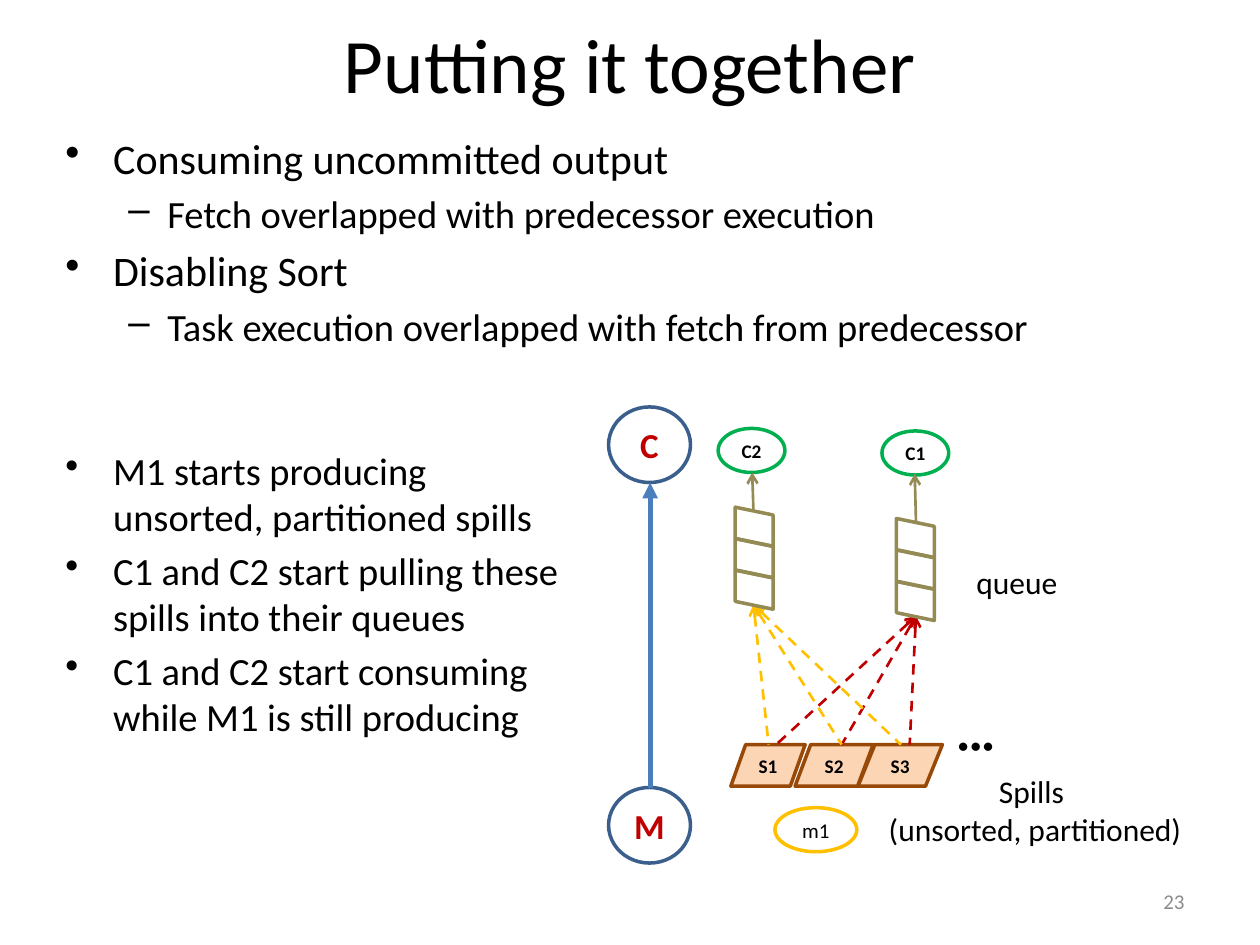
import pptx
import pptx.util
import pptx.oxml.ns
import lxml.etree
from dataclasses import dataclass
from pptx.dml.color import RGBColor
from pptx.enum.dml import MSO_LINE
from pptx.enum.shapes import MSO_CONNECTOR, MSO_SHAPE
from pptx.enum.text import MSO_ANCHOR, PP_ALIGN
from pptx.util import Inches, Pt


@dataclass(frozen=True)
class Theme:
    font: str = "Calibri"
    black: str = "000000"
    grey: str = "8C8C8C"
    red: str = "C00000"
    gold: str = "FFC000"
    green: str = "00B050"
    olive: str = "948A54"
    brown: str = "984807"
    peach: str = "FCD5B5"
    navy: str = "3A5F8C"
    blue: str = "4B7EBC"
    title: int = 44
    dots: int = 32
    point: int = 24
    detail: int = 22
    stage: int = 20
    label: int = 18
    small: int = 12
    tiny: int = 11


theme = Theme()
deck = pptx.Presentation()
deck.slide_width, deck.slide_height = Inches(10), Inches(7.5)
slide = deck.slides.add_slide(deck.slide_layouts[6])


def put(box, text="", size=12, color=theme.black, bold=False, align=PP_ALIGN.CENTER,
        anchor=MSO_ANCHOR.MIDDLE, wrap=True, preset=None, line=None, fill=None):
    """Add a text box, or a preset shape outlined in the line colour."""
    place = [Inches(value) for value in box]
    if preset is None:
        item = slide.shapes.add_textbox(*place)
    else:
        item = slide.shapes.add_shape(preset, *place)
        item.shadow.inherit = False
        item.line.color.rgb = RGBColor.from_string(line)
        item.line.width = Pt(2)
        if fill:
            item.fill.solid()
            item.fill.fore_color.rgb = RGBColor.from_string(fill)
        else:
            item.fill.background()
    frame = item.text_frame
    frame.word_wrap = wrap
    frame.vertical_anchor = anchor
    frame.text = text
    for paragraph in frame.paragraphs:
        paragraph.alignment = align
        paragraph.font.name = theme.font
        paragraph.font.size = Pt(size)
        paragraph.font.bold = bold
        paragraph.font.color.rgb = RGBColor.from_string(color)
    return item


def arrow(tip, tail, color, width=1.5, head="arrow", dashed=False):
    """Draw a line whose arrowhead sits at the tip."""
    link = slide.shapes.add_connector(
        MSO_CONNECTOR.STRAIGHT, *[Inches(value) for value in (*tip, *tail)])
    link.line.color.rgb = RGBColor.from_string(color)
    link.line.width = Pt(width)
    if dashed:
        link.line.dash_style = MSO_LINE.DASH
    qn = pptx.oxml.ns.qn
    outline = link.line._get_or_add_ln()
    lxml.etree.SubElement(outline, qn("a:headEnd"), type=head)
    lxml.etree.SubElement(link._element.spPr, qn("a:effectLst"))


# Title and slide number
put((0.5, 0.08, 9, 0.83), "Putting it together", theme.title)
put((7.17, 6.95, 2.33, 0.4), "23", theme.small, theme.grey, align=PP_ALIGN.RIGHT)

# Bulleted lists: each entry is (level, size, text)
ideas = [
    (0, theme.point, "Consuming uncommitted output"),
    (1, theme.detail, "Fetch overlapped with predecessor execution"),
    (0, theme.point, "Disabling Sort"),
    (1, theme.detail, "Task execution overlapped with fetch from predecessor"),
]
steps = [
    (0, theme.detail, "M1 starts producing unsorted, partitioned spills"),
    (0, theme.detail, "C1 and C2 start pulling these spills into their queues"),
    (0, theme.detail, "C1 and C2 start consuming while M1 is still producing"),
]
bullet_styles = [("•", 0.38, -0.38), ("–", 0.81, -0.31)]
for box, entries in [((0.42, 1, 8.5, 2.08), ideas), ((0.42, 3.5, 4.17, 3.42), steps)]:
    bullets = put(box, "\n".join(text for _, _, text in entries),
                  align=PP_ALIGN.LEFT, anchor=MSO_ANCHOR.TOP)
    for paragraph, (level, size, _) in zip(bullets.text_frame.paragraphs, entries):
        mark, margin, indent = bullet_styles[level]
        paragraph.level = level
        paragraph.font.size = Pt(size)
        paragraph.space_before = Pt(0.2 * size)
        properties = paragraph._p.get_or_add_pPr()
        properties.set("marL", str(Inches(margin)))
        properties.set("indent", str(Inches(indent)))
        bullet = lxml.etree.Element(pptx.oxml.ns.qn("a:buChar"), char=mark)
        properties.find(pptx.oxml.ns.qn("a:defRPr")).addprevious(bullet)

# Stage graph: M feeds C
for stage, top in [("C", 3.23), ("M", 6.25)]:
    put((4.83, top, 0.65, 0.6), stage, theme.stage, theme.red, True, wrap=False,
        preset=MSO_SHAPE.OVAL, line=theme.navy)
arrow((5.16, 3.83), (5.16, 6.25), theme.blue, 3, "triangle")

# Spills written by task m1
for spill, left, width in [("S3", 6.81, 0.67), ("S2", 6.31, 0.62), ("S1", 5.8, 0.59)]:
    put((left, 5.91, width, 0.33), spill, theme.tiny, bold=True, wrap=False,
        preset=MSO_SHAPE.FLOWCHART_DATA, line=theme.brown, fill=theme.peach)
put((6.15, 6.41, 0.65, 0.35), "m1", theme.small, wrap=False,
    preset=MSO_SHAPE.OVAL, line=theme.gold)

# Fetches from every spill into each queue
for queue_end, color, spill_tops in [
    ((7.27, 4.89), theme.red, (6.16, 6.68, 7.22)),
    ((5.98, 4.8), theme.gold, (6.1, 6.68, 7.15)),
]:
    for spill_x in spill_tops:
        arrow(queue_end, (spill_x, 5.91), color, dashed=True)

# Consumers, each with a queue of three slots
for consumer, left, top, queue_left, queue_top, tip, tail in [
    ("C2", 5.7, 3.4, 5.83, 4.03, (5.97, 3.75), (5.98, 4.06)),
    ("C1", 7, 3.42, 7.11, 4.12, (7.26, 3.76), (7.27, 4.14)),
]:
    put((left, top, 0.53, 0.35), consumer, theme.tiny, bold=True, wrap=False,
        preset=MSO_SHAPE.OVAL, line=theme.green)
    for slot in range(3):
        cell = put((queue_left, queue_top + 0.25 * slot, 0.31, 0.3),
                   preset=MSO_SHAPE.FLOWCHART_DATA, line=theme.olive)
        cell.rotation = 90
    arrow(tip, tail, theme.olive)

# Diagram labels
more_spills = put((7.48, 5.75, 0.52, 0.64), "…", theme.dots, bold=True,
                  align=PP_ALIGN.LEFT, anchor=MSO_ANCHOR.TOP, wrap=False)
more_spills.rotation = 180
put((6.93, 6.08, 2.57, 0.71), "Spills \v(unsorted, partitioned)", theme.label,
    anchor=MSO_ANCHOR.TOP)
put((7.65, 4.42, 0.85, 0.4), "queue", theme.label, align=PP_ALIGN.LEFT,
    anchor=MSO_ANCHOR.TOP, wrap=False)

deck.save("out.pptx")
